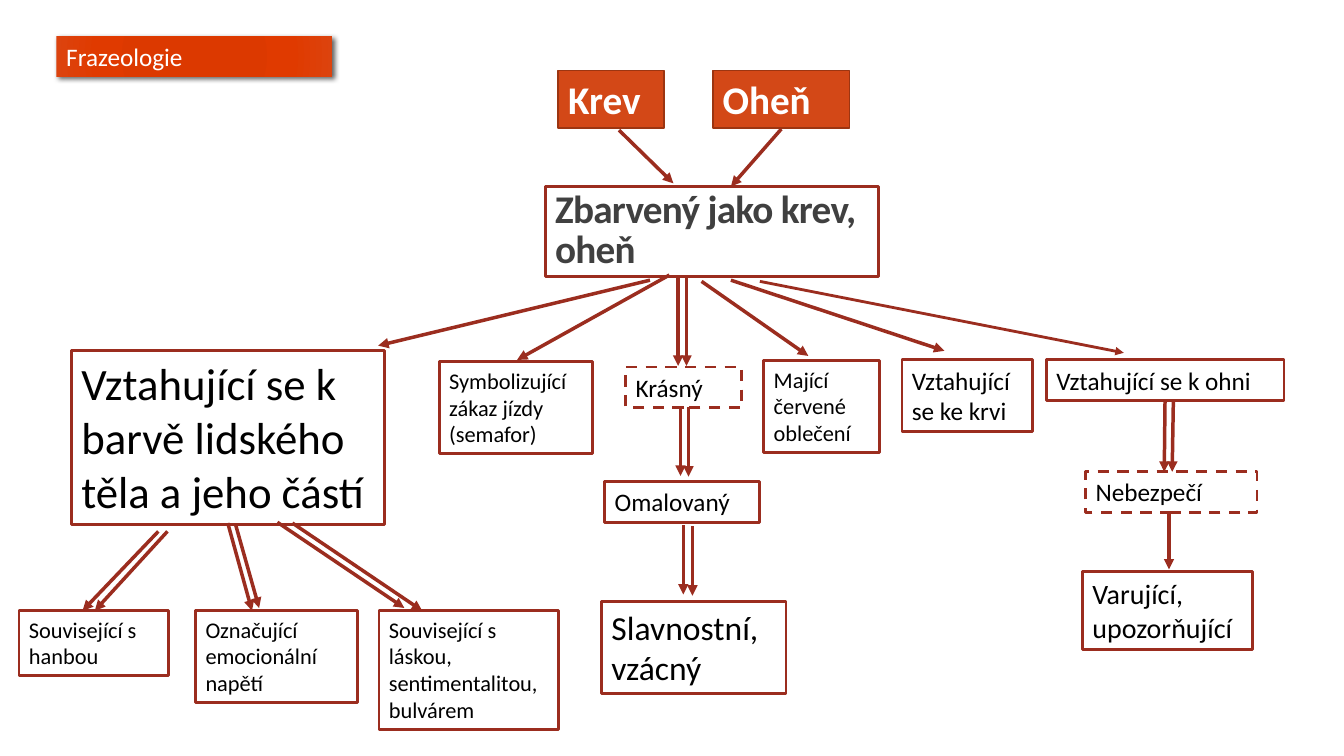
from lxml import etree
from pptx import Presentation
from pptx.dml.color import RGBColor
from pptx.enum.dml import MSO_LINE
from pptx.enum.shapes import MSO_CONNECTOR
from pptx.enum.text import MSO_ANCHOR
from pptx.oxml import parse_xml
from pptx.oxml.ns import qn
from pptx.util import Cm, Pt

DASH = MSO_LINE.DASH
BOTTOM = MSO_ANCHOR.BOTTOM
STRAIGHT = MSO_CONNECTOR.STRAIGHT
FONT = "Calibri"
COLORS = {
    "rust": "9B2D1F", "edge": "9C3511", "orange": "D34817",
    "black": "000000", "gray": "404040", "white": "FFFFFF",
}
GLOW = {0: "DA3900", 34: "DC3900", 70: "E03A00", 100: "DC430E"}
NS = 'xmlns:a="http://schemas.openxmlformats.org/drawingml/2006/main"'
ROW = 1.02  # height of a box with one 18 pt line


def rgb(name):
    return RGBColor.from_string(COLORS[name])


def note(slide, box, text, size, color="black", bold=False):
    """Framed text; box is left, top, width, height in cm."""
    shape = slide.shapes.add_textbox(*map(Cm, box))
    shape.line.color.rgb = rgb("rust")
    shape.line.width = Pt(2)
    shape.text_frame.word_wrap = True
    run = shape.text_frame.paragraphs[0].add_run()
    run.text = text
    font = run.font
    font.name, font.size, font.bold = FONT, Pt(size), bold
    font.color.rgb = rgb(color)
    return shape


def arrow(slide, x, y, ends, width=2.5):
    """Arrow with ends x1, y1, x2, y2 in cm, counted from x, y."""
    x1, y1, x2, y2 = ends
    line = slide.shapes.add_connector(
        STRAIGHT, Cm(x + x1), Cm(y + y1), Cm(x + x2), Cm(y + y2))
    line.line.color.rgb = rgb("rust")
    line.line.width = Pt(width)
    etree.SubElement(line.line._get_or_add_ln(), qn("a:tailEnd"), type="triangle")
    etree.SubElement(line._element.spPr, qn("a:effectLst"))


def tag(slide, x, y):
    shape = note(slide, (x, y, 6.96, ROW), "Frazeologie", 18, "white")
    shape.line.fill.background()
    shape.fill.background()
    stops = "".join(f'<a:gs pos="{pos * 1000}"><a:srgbClr val="{color}"/></a:gs>'
                    for pos, color in GLOW.items())
    props = shape._element.spPr
    props.replace(props.find(qn("a:noFill")), parse_xml(
        f'<a:gradFill {NS} rotWithShape="1"><a:gsLst>{stops}</a:gsLst>'
        '<a:path path="circle"><a:fillToRect l="100000" t="100000" '
        'r="100000" b="100000"/></a:path></a:gradFill>'))
    shape.shadow.inherit = False
    props.find(qn("a:effectLst")).append(parse_xml(
        f'<a:outerShdw {NS} blurRad="{Pt(3.5)}" dist="{Pt(2)}" dir="2700000">'
        '<a:srgbClr val="000000"><a:alpha val="60000"/></a:srgbClr></a:outerShdw>'))


def head(slide, x, y):
    """Two source words and the shared meaning below them."""
    for left, width, word in ((0.33, 2.67, "Krev"), (4.22, 3.45, "Oheň")):
        shape = note(slide, (x + left, y, width, 1.45), word, 28, "white", True)
        shape.fill.solid()
        shape.fill.fore_color.rgb = rgb("orange")
        shape.line.color.rgb = rgb("edge")
        shape.line.width = Pt(1.25)
    title = note(slide, (x, y + 2.92, 8.41, 2.26), "Zbarvený jako krev, oheň",
                 28, "gray", True)
    title.text_frame.vertical_anchor = BOTTOM
    para = title.text_frame.paragraphs[0]
    para.line_spacing = 0.85
    para.runs[0].font._element.set("spc", "-50")
    for ends in ((1.86, 1.5, 3.23, 2.84), (5.95, 1.47, 4.68, 2.92)):
        arrow(slide, x, y, ends)


def fan(slide, x, y):
    """Arrows out of the shared meaning, and the branches that end at once."""
    for left, top, width, height, text, size in (
            (-2.67, 2.16, 3.86, 2.31, "Symbolizující zákaz jízdy (semafor)", 16),
            (5.51, 2.13, 2.92, 2.31, "Mající červené oblečení", 16),
            (8.99, 2.11, 3.3, 1.8, "Vztahující se ke krvi", 18)):
        note(slide, (x + left, y + top, width, height), text, size)
    for ends in ((2.64, 0.1, -4.21, 1.75), (3.13, -0.03, -0.71, 2.11),
                 (3.35, 0.03, 3.35, 2.26), (3.56, 0.03, 3.56, 2.26),
                 (3.94, 0.13, 6.63, 2.01), (4.68, 0.1, 10.06, 1.88)):
        arrow(slide, x, y, ends)
    arrow(slide, x, y, (5.41, 0.13, 14.58, 1.93), 2)


def body(slide, x, y):
    """Branch about the human body with three leaves."""
    note(slide, (x + 1.32, y, 7.9, 4.37),
         "Vztahující se k barvě lidského těla a jeho částí", 32)
    for left, width, height, text in (
            (0, 3.76, 1.63, "Související s hanbou"),
            (4.45, 4.09, 2.31, "Označující emocionální napětí"),
            (9.07, 4.52, 3, "Související s láskou, sentimentalitou, bulvárem")):
        note(slide, (x + left, y + 6.55, width, height), text, 16)
    for ends in ((3.51, 4.55, 1.6, 6.55), (3.74, 4.55, 1.91, 6.55),
                 (5.26, 4.34, 5.87, 6.55), (5.46, 4.39, 6.05, 6.48),
                 (6.51, 4.32, 9.71, 6.48), (6.89, 4.34, 10.16, 6.55)):
        arrow(slide, x, y, ends)


def beauty(slide, x, y):
    first = note(slide, (x + 0.61, y, 2.92, ROW), "Krásný", 18)
    first.line.dash_style = DASH
    note(slide, (x + 0.08, y + 2.89, 3.91, ROW), "Omalovaný", 18)
    note(slide, (x, y + 5.91, 4.65, 2.31), "Slavnostní, vzácný", 24)
    for left, top in ((1.99, 0.99), (2.19, 1.01), (2.06, 3.98), (2.29, 4.01)):
        arrow(slide, x, y, (left, top, left, top + 1.75))


def fire(slide, x, y):
    note(slide, (x, y, 5.99, ROW), "Vztahující se k ohni", 18)
    risk = note(slide, (x + 0.99, y + 2.82, 4.32, ROW), "Nebezpečí", 18)
    risk.line.dash_style = DASH
    note(slide, (x + 0.91, y + 5.33, 4.29, 1.96), "Varující, upozorňující", 20)
    for ends in ((2.99, 1.01, 2.97, 2.82), (3.2, 1.01, 3.17, 2.82),
                 (3.09, 3.86, 3.09, 5.28)):
        arrow(slide, x, y, ends)


def main():
    deck = Presentation()
    deck.slide_width, deck.slide_height = Cm(33.87), Cm(19.05)
    slide = deck.slides.add_slide(deck.slide_layouts[6])
    tag(slide, 1.42, 0.91)
    head(slide, 13.74, 1.78)
    fan(slide, 13.74, 6.96)
    body(slide, 0.48, 8.84)
    beauty(slide, 15.16, 9.25)
    fire(slide, 26.37, 9.07)
    deck.save("out.pptx")


if __name__ == "__main__":
    main()
